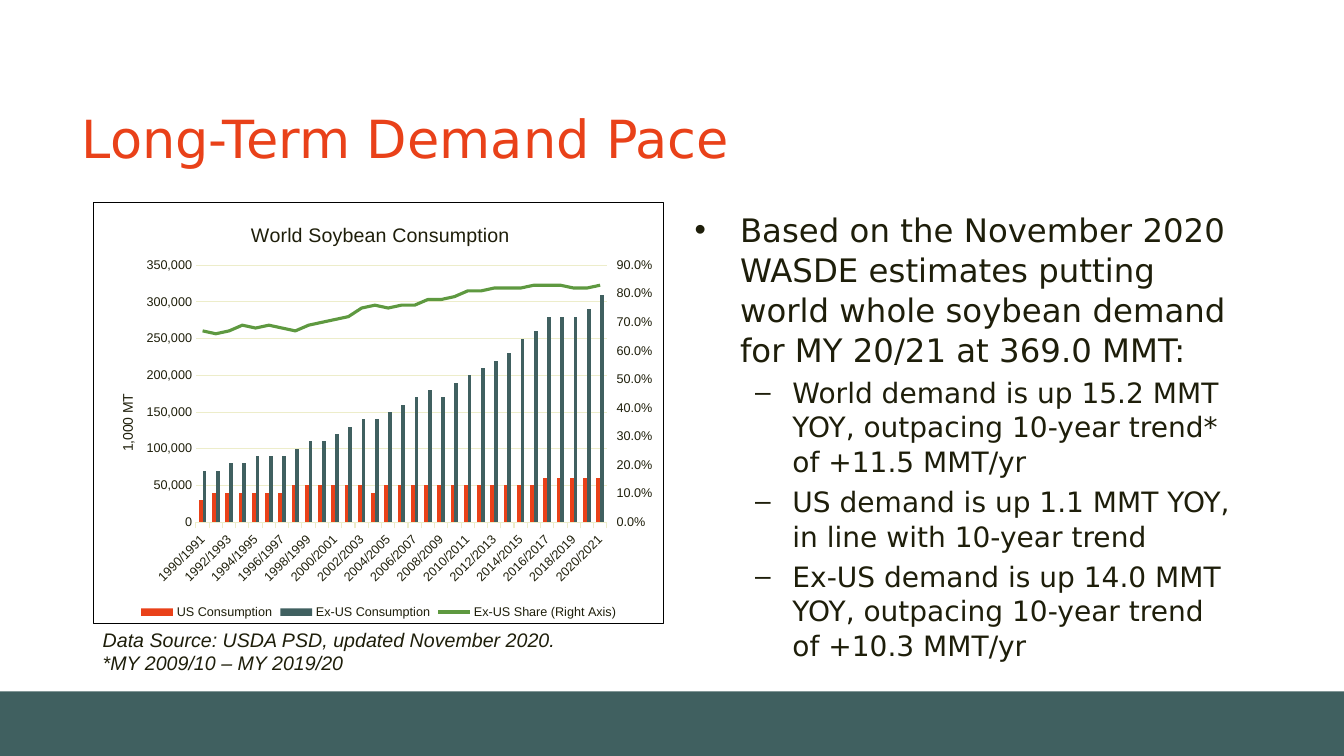
from dataclasses import dataclass

from lxml.etree import SubElement
from pptx import Presentation
from pptx.chart.axis import ValueAxis
from pptx.chart.data import CategoryChartData as ChartData
from pptx.dml.color import RGBColor as Color
from pptx.enum.chart import XL_CHART_TYPE as ChartType
from pptx.enum.chart import XL_LEGEND_POSITION as LegendPosition
from pptx.enum.chart import XL_MARKER_STYLE as Marker
from pptx.enum.chart import XL_TICK_MARK as Tick
from pptx.enum.shapes import MSO_SHAPE as Shape
from pptx.enum.text import MSO_ANCHOR as Anchor
from pptx.oxml import parse_xml
from pptx.oxml.ns import nsdecls, qn
from pptx.util import Inches, Pt


@dataclass(frozen=True)
class Theme:
    ink: Color = Color.from_string("1E1E0A")
    accent: Color = Color.from_string("E94119")
    slate: Color = Color.from_string("406060")
    green: Color = Color.from_string("5E9940")
    grid: Color = Color.from_string("EDEDCA")
    heading_font: str = "DejaVu Sans"
    chart_font: str = "Arial"
    title: float = 37.5
    levels: tuple = (23.1, 20)
    note: float = 14
    axis_title: float = 10
    label: float = 9


THEME = Theme()
WIDTH, HEIGHT = 13.33, 7.5
LEFT, TOP, COLUMN = 0.92, 2, 5.67
CHART_HEIGHT = 4.19
INDENTS = ((0.45, -0.45, "•"), (0.97, -0.37, "–"))

POINTS = (
    (0, "Based on the November 2020 WASDE estimates putting world whole soybean demand for MY 20/21 at 369.0 MMT:"),
    (1, "World demand is up 15.2 MMT YOY, outpacing 10-year trend* of +11.5 MMT/yr"),
    (1, "US demand is up 1.1 MMT YOY, in line with 10-year trend"),
    (1, "Ex-US demand is up 14.0 MMT YOY, outpacing 10-year trend of +10.3 MMT/yr"),
)
NOTES = ("Data Source: USDA PSD, updated November 2020.", "*MY 2009/10 – MY 2019/20")

YEARS = [f"{year}/{year + 1}" for year in range(1990, 2021)]
US_TEN_THOUSANDS = [3, 4, 4, 4, 4, 4, 4, 5, 5, 5, 5, 5, 5, 4, 5, 5,
                    5, 5, 5, 5, 5, 5, 5, 5, 5, 5, 6, 6, 6, 6, 6]
EX_US_TEN_THOUSANDS = [7, 7, 8, 8, 9, 9, 9, 10, 11, 11, 12, 13, 14, 14, 15, 16,
                       17, 18, 17, 19, 20, 21, 22, 23, 25, 26, 28, 28, 28, 29, 31]
EX_US_PERCENT = [67, 66, 67, 69, 68, 69, 68, 67, 69, 70, 71, 72, 75, 76, 75, 76,
                 76, 78, 78, 79, 81, 81, 82, 82, 82, 83, 83, 83, 82, 82, 83]


def set_font(font, size, name, color=THEME.ink, italic=False):
    font.size, font.name = Pt(size), name
    font.color.rgb = color
    font.bold, font.italic = False, italic


def add_span(para, text, *style, **options):
    span = para.add_run()
    span.text = text
    set_font(span.font, *style, **options)


def add_text_frame(page, box, margins=(0.14, 0.07)):
    frame = page.shapes.add_textbox(*map(Inches, box)).text_frame
    frame.word_wrap = True
    frame.margin_left = frame.margin_right = Inches(margins[0])
    frame.margin_top = frame.margin_bottom = Inches(margins[1])
    return frame


def next_para(frame, index):
    return frame.add_paragraph() if index else frame.paragraphs[0]


def add_footer_band(page, box):
    band = page.shapes.add_shape(Shape.RECTANGLE, *map(Inches, box))
    band.shadow.inherit = False
    band.fill.solid()
    band.fill.fore_color.rgb = THEME.slate
    band.line.fill.background()


def add_title(page, box):
    frame = add_text_frame(page, box)
    frame.vertical_anchor = Anchor.MIDDLE
    add_span(frame.paragraphs[0], "Long-Term Demand Pace", THEME.title, THEME.heading_font, THEME.accent)


def add_points(page, box):
    frame = add_text_frame(page, box)
    for index, (level, text) in enumerate(POINTS):
        para = next_para(frame, index)
        margin, indent, bullet = INDENTS[level]
        para.level = level
        para.line_spacing = 1.03
        para.space_before = Pt(4 if index else 0)
        properties = para._p.get_or_add_pPr()
        properties.set("marL", str(Inches(margin)))
        properties.set("indent", str(Inches(indent)))
        SubElement(properties, qn("a:buFont"), typeface=THEME.chart_font)
        SubElement(properties, qn("a:buChar"), char=bullet)
        add_span(para, text, THEME.levels[level], THEME.heading_font)


def add_notes(page, box):
    frame = add_text_frame(page, box, (0.1, 0.05))
    for index, text in enumerate(NOTES):
        add_span(next_para(frame, index), text, THEME.note, THEME.chart_font, italic=True)


def place_part(part, inner=False, **shares):
    """Fix a chart part at shares of the chart's size."""
    layout = part.find(qn("c:layout"))
    if layout is None:
        layout = parse_xml(f"<c:layout {nsdecls('c')}/>")
        part.insert(0, layout)
    manual = SubElement(layout, qn("c:manualLayout"))
    if inner:
        SubElement(manual, qn("c:layoutTarget"), val="inner")
    for key in ("x", "y"):
        SubElement(manual, qn(f"c:{key}Mode"), val="edge")
    for key, share in shares.items():
        SubElement(manual, qn(f"c:{key}"), val=str(share))


def title_part(part, text, size, **shares):
    add_span(part.text_frame.paragraphs[0], text, size, THEME.chart_font)
    place_part(part._element, **shares)


def style_axis(axis, tick, line=None):
    axis.major_tick_mark, axis.minor_tick_mark = tick, Tick.NONE
    set_font(axis.tick_labels.font, THEME.label, THEME.chart_font)
    if line is None:
        axis.format.line.fill.background()
    else:
        axis.format.line.color.rgb = line
        axis.format.line.width = Pt(0.75)


def scale_axis(axis, top, step, number_format):
    axis.minimum_scale, axis.maximum_scale, axis.major_unit = 0, top, step
    axis.tick_labels.number_format = number_format
    axis.tick_labels.number_format_is_linked = False


def move_share_to_right_axis(chart):
    """Turn the last column series into a line with its own axes."""
    plot_area = chart._chartSpace.chart.plotArea
    columns = plot_area.find(qn("c:barChart"))
    series = columns.findall(qn("c:ser"))[-1]
    for setting in series.findall(qn("c:invertIfNegative")):
        series.remove(setting)
    line_plot = parse_xml(
        f'<c:lineChart {nsdecls("c")}><c:grouping val="standard"/><c:varyColors val="0"/>'
        '<c:marker val="1"/><c:axId val="5001"/><c:axId val="5002"/></c:lineChart>')
    line_plot.insert(2, series)
    columns.addnext(line_plot)
    previous = plot_area.find(qn("c:valAx"))
    for kind, own, other, hidden, side, cross in (
            ("catAx", 5001, 5002, 1, "b", "autoZero"), ("valAx", 5002, 5001, 0, "r", "max")):
        axis = parse_xml(
            f'<c:{kind} {nsdecls("c")}><c:axId val="{own}"/>'
            '<c:scaling><c:orientation val="minMax"/></c:scaling>'
            f'<c:delete val="{hidden}"/><c:axPos val="{side}"/><c:tickLblPos val="nextTo"/>'
            f'<c:crossAx val="{other}"/><c:crosses val="{cross}"/></c:{kind}>')
        previous.addnext(axis)
        previous = axis
    return ValueAxis(previous)


def add_consumption_chart(page, box):
    data = ChartData(number_format="#,##0")
    data.categories = YEARS
    data.add_series("US Consumption", [value * 10000 for value in US_TEN_THOUSANDS])
    data.add_series("Ex-US Consumption", [value * 10000 for value in EX_US_TEN_THOUSANDS])
    data.add_series("Ex-US Share (Right Axis)", [value / 100 for value in EX_US_PERCENT], "0.0%")
    chart = page.shapes.add_chart(ChartType.COLUMN_CLUSTERED, *map(Inches, box), data).chart
    set_font(chart.font, THEME.axis_title, THEME.chart_font)
    title_part(chart.chart_title, "World Soybean Consumption", THEME.note, x=0.27, y=0.04)

    # Axes
    years, tonnes = chart.category_axis, chart.value_axis
    share = move_share_to_right_axis(chart)
    style_axis(years, Tick.OUTSIDE, THEME.grid)
    style_axis(tonnes, Tick.NONE)
    style_axis(share, Tick.OUTSIDE)
    scale_axis(tonnes, 350000, 50000, "#,##0")
    scale_axis(share, 0.9, 0.1, "0.0%")
    tonnes.major_gridlines.format.line.color.rgb = THEME.grid
    tonnes.major_gridlines.format.line.width = Pt(0.75)
    title_part(tonnes.axis_title, "1,000 MT", THEME.axis_title, x=0.04, y=0.45)
    years._element.find(qn("c:txPr")).find(qn("a:bodyPr")).set("rot", "-2700000")
    years._element.find(qn("c:noMultiLvlLbl")).addprevious(
        parse_xml(f'<c:tickLblSkip {nsdecls("c")} val="2"/>'))
    place_part(chart._chartSpace.chart.plotArea, inner=True, x=0.18, y=0.15, w=0.72, h=0.61)

    # Series
    columns, line_plot = chart.plots
    columns.gap_width, columns.overlap, columns.vary_by_categories = 150, 0, False
    for series, color in zip(columns.series, (THEME.accent, THEME.slate)):
        series.format.fill.solid()
        series.format.fill.fore_color.rgb = color
    line = line_plot.series[0]
    line.smooth, line.marker.style = False, Marker.NONE
    line.format.line.color.rgb = THEME.green
    line.format.line.width = Pt(2.25)

    # Legend and frame
    chart.has_legend = True
    chart.legend.position, chart.legend.include_in_layout = LegendPosition.BOTTOM, False
    set_font(chart.legend.font, THEME.label, THEME.chart_font)
    chart._chartSpace.chart.addnext(parse_xml(
        f'<c:spPr {nsdecls("c", "a")}><a:solidFill><a:srgbClr val="FFFFFF"/></a:solidFill>'
        f'<a:ln w="{Pt(0.75)}"><a:solidFill><a:srgbClr val="000000"/></a:solidFill></a:ln></c:spPr>'))


def main():
    deck = Presentation()
    deck.slide_width, deck.slide_height = Inches(WIDTH), Inches(HEIGHT)
    page = deck.slides.add_slide(deck.slide_layouts[6])
    add_footer_band(page, (0, HEIGHT - 0.64, WIDTH, 0.64))
    add_title(page, (0.67, 0.74, 12, 1.25))
    add_points(page, (LEFT + COLUMN + 0.16, TOP, COLUMN, 4.76))
    add_notes(page, (LEFT, TOP + CHART_HEIGHT - 0.01, COLUMN, 0.57))
    add_consumption_chart(page, (LEFT, TOP, COLUMN, CHART_HEIGHT))
    deck.save("out.pptx")


if __name__ == "__main__":
    main()
